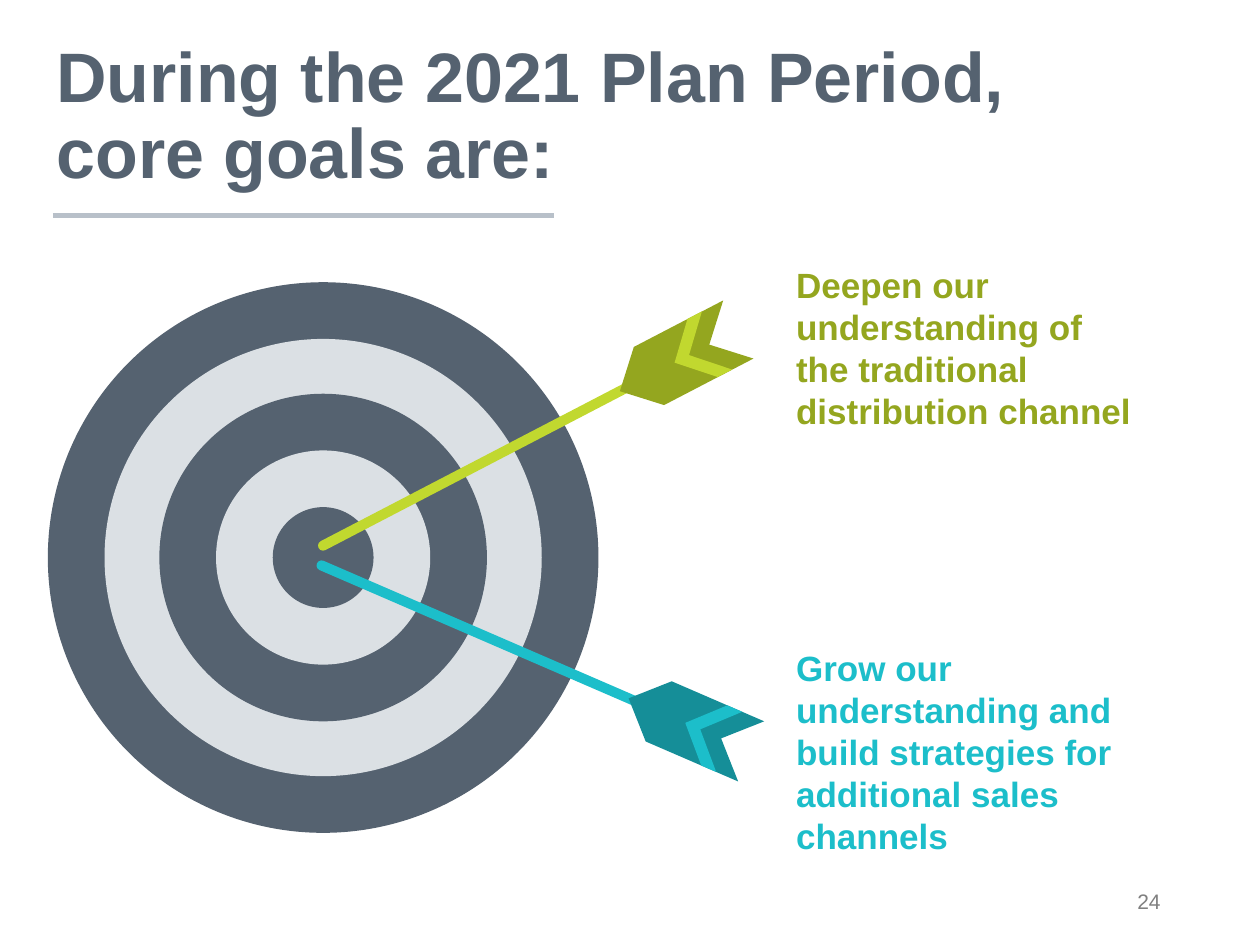
from math import cos, radians, sin

from lxml import etree
from pptx import Presentation
from pptx.dml.color import RGBColor
from pptx.enum.shapes import MSO_CONNECTOR, MSO_SHAPE
from pptx.enum.text import MSO_ANCHOR, MSO_AUTO_SIZE, PP_ALIGN
from pptx.oxml.ns import qn
from pptx.util import Inches, Pt

ELLIPSE = MSO_SHAPE.OVAL
ROUNDED = MSO_SHAPE.ROUNDED_RECTANGLE
CHEVRON = MSO_SHAPE.CHEVRON
STRAIGHT = MSO_CONNECTOR.STRAIGHT
TOP = MSO_ANCHOR.TOP
MIDDLE = MSO_ANCHOR.MIDDLE
LEFT = PP_ALIGN.LEFT
RIGHT = PP_ALIGN.RIGHT
GROW = MSO_AUTO_SIZE.SHAPE_TO_FIT_TEXT

SLATE = "556270"
MIST = "DBE0E4"
RULE_GRAY = "B8C0C9"
PAGE_GRAY = "808080"
LIME = "C1D82F"
OLIVE = "94A61F"
TURQUOISE = "1CBECA"
TEAL = "158E98"

RING_DIAMETERS = (4.37, 3.47, 2.6, 1.7, 0.8)
GOALS = (
    ("Deepen our understanding of the traditional distribution channel",
     OLIVE, (5.72, 2.04, 3.46, 1.45)),
    ("Grow our understanding and build strategies for additional sales channels",
     TURQUOISE, (5.72, 5.08, 3.26, 1.78)),
)


def color(value):
    return RGBColor.from_string(value)


def add_filled(shapes, kind, center, size, fill, rotation=0, adjustment=None):
    (x, y), (width, height) = center, size
    shape = shapes.add_shape(kind, Inches(x - width / 2), Inches(y - height / 2),
                             Inches(width), Inches(height))
    shape.shadow.inherit = False
    shape.fill.solid()
    shape.fill.fore_color.rgb = color(fill)
    shape.line.fill.background()
    shape.rotation = rotation
    if adjustment is not None:
        shape.adjustments[0] = adjustment


def add_text(slide, box, text, size, text_color, bold=False, anchor=TOP, alignment=LEFT):
    shape = slide.shapes.add_textbox(*map(Inches, box))
    text_frame = shape.text_frame
    text_frame.word_wrap = True
    text_frame.vertical_anchor = anchor
    text_frame.text = text
    paragraph = text_frame.paragraphs[0]
    paragraph.alignment = alignment
    font = paragraph.runs[0].font
    font.name = "Arial"
    font.size = Pt(size)
    font.bold = bold
    font.color.rgb = color(text_color)
    return text_frame


def add_title(slide, box):
    left, top, width, height = box
    text_frame = add_text(slide, box, "During the 2021 Plan Period, core goals are:",
                          40, SLATE, bold=True, anchor=MIDDLE)
    text_frame.paragraphs[0].line_spacing = 0.9
    rule_left, rule_top = left + 0.07, top + height + 0.1
    rule = slide.shapes.add_connector(STRAIGHT, Inches(rule_left), Inches(rule_top),
                                      Inches(rule_left + 3.98), Inches(rule_top))
    rule.line.color.rgb = color(RULE_GRAY)
    rule.line.width = Pt(3)
    etree.SubElement(rule._element.spPr, qn("a:effectLst"))


def add_target(slide, box):
    left, top, width, height = box
    center = (left + width / 2, top + height / 2)
    shapes = slide.shapes.add_group_shape().shapes
    for index, diameter in enumerate(RING_DIAMETERS):
        add_filled(shapes, ELLIPSE, center, (diameter, diameter),
                   MIST if index % 2 else SLATE)


def add_arrow(slide, shaft_box, angle, light, dark):
    left, top, width, height = shaft_box
    x, y = left + width / 2, top + height / 2
    shapes = slide.shapes.add_group_shape().shapes

    def along(distance):
        return x + distance * cos(radians(angle)), y + distance * sin(radians(angle))

    add_filled(shapes, ROUNDED, (x, y), (width, height), light, angle, 0.5)
    add_filled(shapes, CHEVRON, along(1.82), (1.06, 0.52), dark, angle + 180)
    add_filled(shapes, CHEVRON, along(1.97), (0.38, 0.52), light, angle + 180, 0.66)


def add_goal(slide, box, text, text_color):
    text_frame = add_text(slide, box, text, 20, text_color, bold=True)
    text_frame.auto_size = GROW
    paragraph = text_frame.paragraphs[0]
    paragraph.level = 1
    properties = paragraph._p.get_or_add_pPr()
    properties.set("marL", str(Inches(0.5)))
    properties.set("indent", "0")


def main():
    presentation = Presentation()
    presentation.slide_width = Inches(10)
    presentation.slide_height = Inches(7.5)
    slide = presentation.slides.add_slide(presentation.slide_layouts[6])

    add_target(slide, (0.38, 2.24, 4.37, 4.37))
    add_arrow(slide, (2.37, 3.66, 2.81, 0.08), -27.5, LIME, OLIVE)
    add_arrow(slide, (2.4, 4.99, 2.81, 0.08), 23.4, TURQUOISE, TEAL)
    for text, text_color, box in GOALS:
        add_goal(slide, box, text, text_color)
    add_title(slide, (0.35, 0.26, 8.62, 1.35))
    add_text(slide, (7.06, 6.95, 2.25, 0.4), "24", 12, PAGE_GRAY,
             anchor=MIDDLE, alignment=RIGHT)

    presentation.save("out.pptx")


if __name__ == "__main__":
    main()
